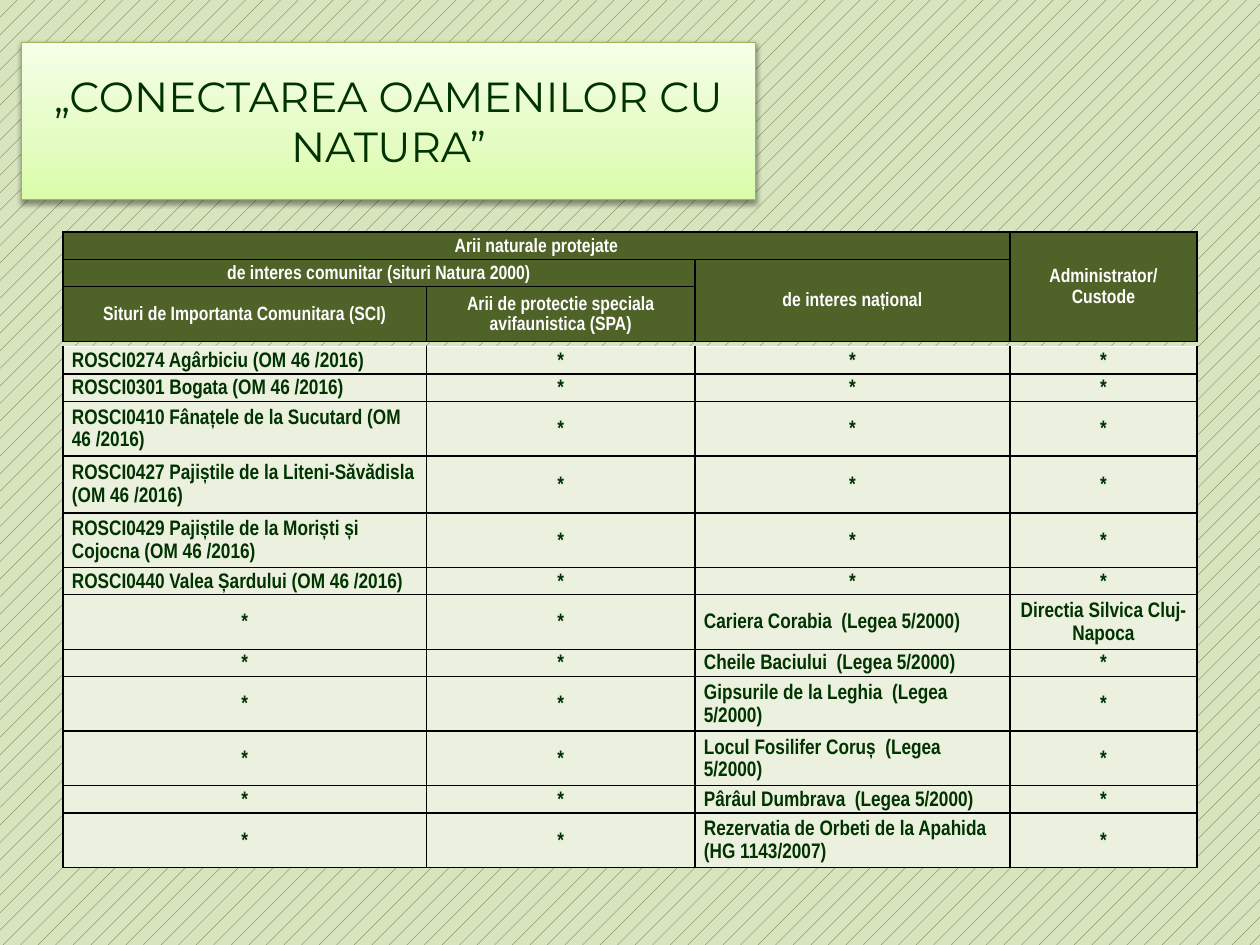
from lxml import etree
from pptx import Presentation
from pptx.dml.color import RGBColor
from pptx.enum.dml import MSO_PATTERN
from pptx.enum.text import MSO_ANCHOR, PP_ALIGN
from pptx.oxml import parse_xml
from pptx.oxml.ns import qn
from pptx.util import Cm, Pt

CENTER, LEFT = PP_ALIGN.CENTER, PP_ALIGN.LEFT
MIDDLE = MSO_ANCHOR.MIDDLE
DOTS = MSO_PATTERN.PERCENT_5
NAMESPACE = 'xmlns:a="http://schemas.openxmlformats.org/drawingml/2006/main"'
TITLE_ONLY = 5

COLORS = {
    "olive": "4F6228", "sage": "D7E4BD", "pale": "EBF1DE", "text": "003300",
    "white": "FFFFFF", "black": "000000", "title line": "98B955",
}
TITLE_GRADIENT = [(0, "DAFDA7"), (35, "E4FCC2"), (100, "F5FFE7")]

TABLE_LEFT = 1.27
COLUMN_WIDTHS = [7.33, 5.41, 6.35, 3.77]
SINGLE, DOUBLE = 0.55, 1.1  # heights of rows with one and two lines

HEADER_ROWS = [
    ["Arii naturale protejate", "", "", "Administrator/ Custode"],
    ["de interes comunitar (situri Natura 2000)", "", "de interes național", ""],
    ["Situri de Importanta Comunitara (SCI)",
     "Arii de protectie speciala avifaunistica (SPA)", "", ""],
]
HEADER_MERGES = [((0, 0), (0, 2)), ((0, 3), (2, 3)), ((1, 0), (1, 1)), ((1, 2), (2, 2))]

COMMUNITY_SITES = [
    ("ROSCI0274 Agârbiciu (OM 46 /2016)", SINGLE),
    ("ROSCI0301 Bogata (OM 46 /2016)", SINGLE),
    ("ROSCI0410 Fânațele de la Sucutard (OM 46 /2016)", DOUBLE),
    ("ROSCI0427 Pajiștile de la Liteni-Săvădisla (OM 46 /2016)", 1.15),
    ("ROSCI0429 Pajiștile de la Moriști și Cojocna (OM 46 /2016)", DOUBLE),
    ("ROSCI0440 Valea Șardului (OM 46 /2016)", SINGLE),
]
NATIONAL_SITES = [
    ("Cariera Corabia  (Legea 5/2000)", DOUBLE, "Directia Silvica Cluj-Napoca"),
    ("Cheile Baciului  (Legea 5/2000)", SINGLE, "*"),
    ("Gipsurile de la Leghia  (Legea 5/2000)", DOUBLE, "*"),
    ("Locul Fosilifer Coruș  (Legea 5/2000)", DOUBLE, "*"),
    ("Pârâul Dumbrava  (Legea 5/2000)", SINGLE, "*"),
    ("Rezervatia de Orbeti de la Apahida (HG 1143/2007)", DOUBLE, "*"),
]
SITE_NAMES = {site[0] for site in COMMUNITY_SITES + NATIONAL_SITES}

HEADER_FONT = {"name": "Arial Narrow", "size": Pt(11), "bold": True, "color": "white"}
BODY_FONT = {"name": "Arial Narrow", "size": Pt(12), "bold": True, "color": "text"}
TITLE_FONT = {"name": "Montserrat", "size": Pt(24), "bold": False, "color": "text"}
CELL_FORMAT = {
    "vertical_anchor": MIDDLE, "margin_left": Cm(0.18), "margin_right": Cm(0.18),
    "margin_top": 0, "margin_bottom": 0,
}


def color(name):
    return RGBColor.from_string(COLORS[name])


def set_attributes(target, values):
    for name, value in values.items():
        setattr(target, name, value)


class SlideBuilder:
    def __init__(self, presentation):
        self.slide = presentation.slides.add_slide(presentation.slide_layouts[TITLE_ONLY])

    def background(self):
        fill = self.slide.background.fill
        fill.patterned()
        fill.pattern = DOTS
        fill.fore_color.rgb = color("olive")
        fill.back_color.rgb = color("sage")

    def add_text(self, frame, text, font_format, alignment, spacing):
        paragraph = frame.paragraphs[0]
        set_attributes(paragraph, {"alignment": alignment, "line_spacing": spacing})
        run = paragraph.add_run()
        run.text = text
        for name, value in font_format.items():
            if name == "color":
                run.font.color.rgb = color(value)
            else:
                setattr(run.font, name, value)

    def title(self, text, left, top, width, height):
        shape = self.slide.shapes.title
        set_attributes(shape, {"left": Cm(left), "top": Cm(top),
                               "width": Cm(width), "height": Cm(height)})
        stops = "".join(
            f'<a:gs pos="{position * 1000}"><a:srgbClr val="{value}"/></a:gs>'
            for position, value in TITLE_GRADIENT)
        properties = shape.element.spPr
        properties.append(parse_xml(
            f'<a:prstGeom {NAMESPACE} prst="roundRect"><a:avLst/></a:prstGeom>'))
        properties.append(parse_xml(
            f'<a:gradFill {NAMESPACE} rotWithShape="1"><a:gsLst>{stops}</a:gsLst>'
            '<a:lin ang="16200000" scaled="0"/></a:gradFill>'))
        shape.line.color.rgb = color("title line")
        shape.line.width = Pt(0.75)
        properties.append(parse_xml(
            f'<a:effectLst {NAMESPACE}><a:outerShdw blurRad="{Pt(3.1)}" dist="{Pt(1.6)}" '
            f'dir="5400000" rotWithShape="0"><a:srgbClr val="{COLORS["black"]}">'
            '<a:alpha val="38000"/></a:srgbClr></a:outerShdw></a:effectLst>'))
        set_attributes(shape.text_frame, {"word_wrap": True, "vertical_anchor": MIDDLE})
        self.add_text(shape.text_frame, text, TITLE_FONT, CENTER, 1.0)

    def borders(self, cell, sides):
        """Draw thin black lines on the given sides, in the order L, R, T, B."""
        properties = cell._tc.get_or_add_tcPr()
        for index, side in enumerate(sides):
            line = etree.Element(qn(f"a:ln{side}"), w=str(Pt(1)))
            fill = etree.SubElement(line, qn("a:solidFill"))
            etree.SubElement(fill, qn("a:srgbClr"), val=COLORS["black"])
            properties.insert(index, line)

    def table(self, top, rows, heights, font_format, fill, merges=(), open_top=False):
        frame = self.slide.shapes.add_table(
            len(rows), len(COLUMN_WIDTHS), Cm(TABLE_LEFT), Cm(top),
            Cm(sum(COLUMN_WIDTHS)), Cm(sum(heights)))
        table = frame.table
        set_attributes(table, {"first_row": False, "horz_banding": False})
        for column, width in zip(table.columns, COLUMN_WIDTHS):
            column.width = Cm(width)
        for row, height in zip(table.rows, heights):
            row.height = Cm(height)
        for start, end in merges:
            table.cell(*start).merge(table.cell(*end))
        for row_index, texts in enumerate(rows):
            for column_index, text in enumerate(texts):
                cell = table.cell(row_index, column_index)
                set_attributes(cell, CELL_FORMAT)
                cell.fill.solid()
                cell.fill.fore_color.rgb = color(fill)
                self.borders(cell, "LRB" if open_top and row_index == 0 else "LRTB")
                if text:
                    alignment = LEFT if text in SITE_NAMES else CENTER
                    self.add_text(cell.text_frame, text, font_format, alignment, 1.15)


def main():
    presentation = Presentation()
    set_attributes(presentation, {"slide_width": Cm(25.4), "slide_height": Cm(19.05)})
    builder = SlideBuilder(presentation)
    builder.background()
    builder.title("„CONECTAREA OAMENILOR CU NATURA”", 0.43, 0.85, 14.8, 3.17)
    builder.table(4.68, HEADER_ROWS, [SINGLE, SINGLE, DOUBLE], HEADER_FONT, "olive",
                  merges=HEADER_MERGES)
    body_rows = [[name, "*", "*", "*"] for name, _ in COMMUNITY_SITES]
    body_rows += [["*", "*", name, keeper] for name, _, keeper in NATIONAL_SITES]
    heights = [site[1] for site in COMMUNITY_SITES + NATIONAL_SITES]
    builder.table(6.99, body_rows, heights, BODY_FONT, "pale", open_top=True)
    presentation.save("out.pptx")


if __name__ == "__main__":
    main()
